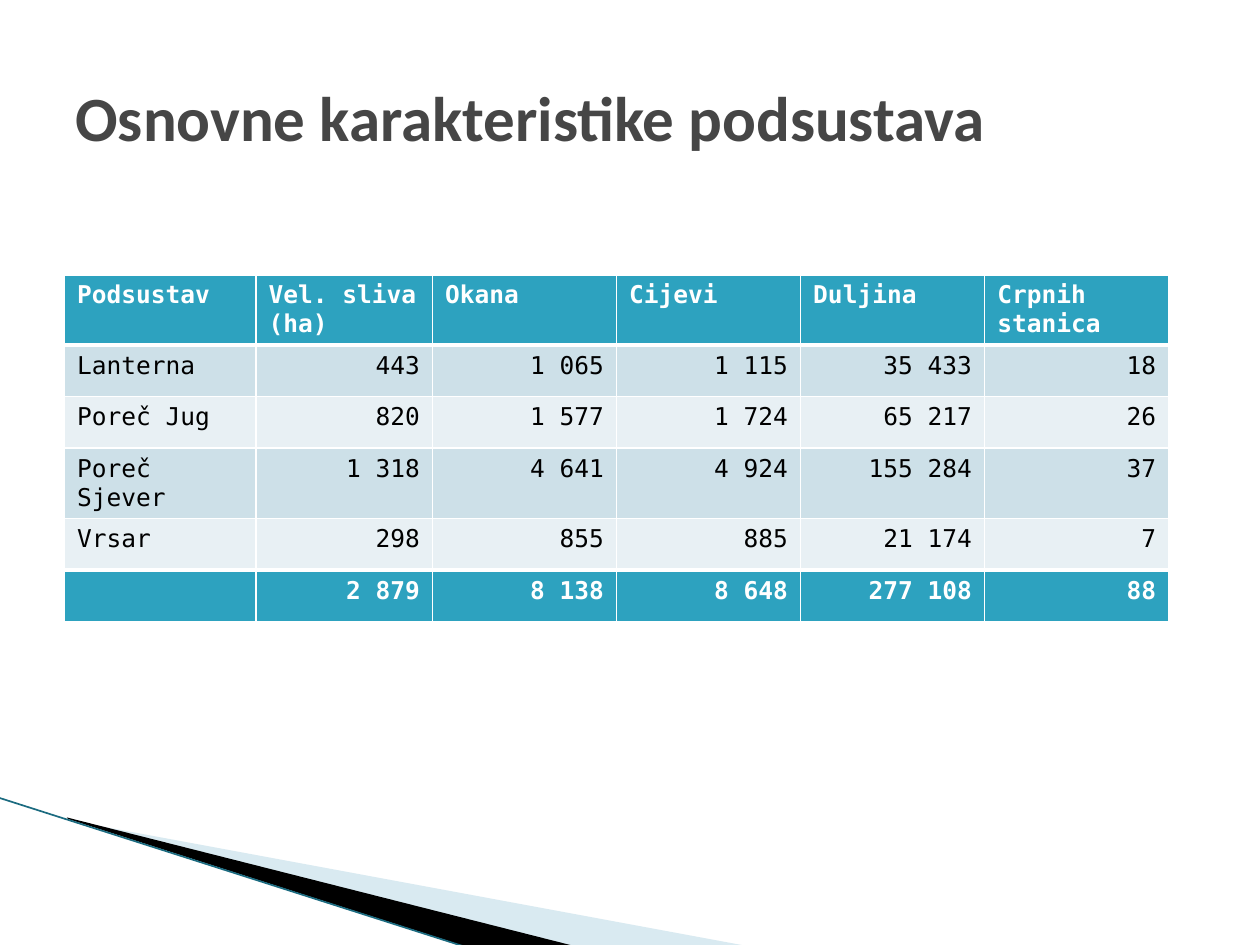
from dataclasses import dataclass
from typing import Any

from lxml.etree import SubElement as Sub
from pptx import Presentation as Deck
from pptx.dml.color import RGBColor as Rgb
from pptx.enum.shapes import MSO_CONNECTOR as Link
from pptx.enum.text import MSO_ANCHOR as Anchor, PP_ALIGN as Align
from pptx.oxml.ns import qn
from pptx.util import Cm, Pt


@dataclass(frozen=True)
class Theme:
    title: str = "464646"
    teal: str = "2DA2BF"
    edge: str = "1B6B80"
    pale: str = "A0CBDC"
    bands: tuple[str, str] = ("CDE0E8", "E8F0F4")
    black: str = "000000"
    white: str = "FFFFFF"
    head: str = "Calibri"
    mono: str = "DejaVu Sans Mono"
    big: int = 36
    small: int = 14
    thin: int = 1
    thick: int = 3


@dataclass(frozen=True)
class Wedge:
    points: tuple[tuple[float, float], ...]
    color: str
    alpha: int = 100


@dataclass(frozen=True)
class Row:
    texts: tuple[str, ...]
    fill: str
    color: str
    bold: bool
    top: int
    base: int


T = Theme()

# Points in centimetres
WEDGES = (
    Wedge(((1.4, 16.54), (15.11, 19.08), (11.58, 19.08), (1.4, 16.51)), T.pale, 40),
    Wedge(((1.35, 16.48), (11.61, 19.08), (9.45, 19.1), (1.37, 16.51)), T.black),
)
HEAD = ("Podsustav", "Vel. sliva (ha)", "Okana", "Cijevi", "Duljina", "Crpnih stanica")
BODY = (
    ("Lanterna", "443", "1 065", "1 115", "35 433", "18"),
    ("Poreč Jug", "820", "1 577", "1 724", "65 217", "26"),
    ("Poreč Sjever", "1 318", "4 641", "4 924", "155 284", "37"),
    ("Vrsar", "298", "855", "885", "21 174", "7"),
)
TOTAL = ("", "2 879", "8 138", "8 648", "277 108", "88")
WIDTHS = (3.86, 3.56) + (3.71,) * 4
HEIGHT = 1.04


def write(para: Any, text: str, color: str, **form: Any) -> None:
    run = para.add_run()
    run.text = text
    for name, value in form.items():
        setattr(run.font, name, value)
    run.font.color.rgb = Rgb.from_string(color)


def draw_wedge(slide: Any, wedge: Wedge) -> None:
    first, *rest = [(Cm(x), Cm(y)) for x, y in wedge.points]
    pen = slide.shapes.build_freeform(*first)
    pen.add_line_segments(rest, close=True)
    shape = pen.convert_to_shape()
    shape.shadow.inherit = False
    shape.line.fill.background()
    shape.fill.solid()
    shape.fill.fore_color.rgb = Rgb.from_string(wedge.color)
    if wedge.alpha < 100:
        tint = shape.fill._xPr.find(".//" + qn("a:srgbClr"))
        Sub(tint, qn("a:alpha"), val=str(wedge.alpha * 1000))


def draw_edge(slide: Any) -> None:
    line = slide.shapes.add_connector(
        Link.STRAIGHT, Cm(-0.03), Cm(16.08), Cm(9.42), Cm(19.1))
    line.line.width = Pt(0.95)
    line.line.color.rgb = Rgb.from_string(T.edge)
    Sub(line._element.spPr, qn("a:effectLst"))


def draw_title(slide: Any, text: str) -> None:
    box = slide.shapes.add_textbox(Cm(1.27), Cm(0.76), Cm(22.86), Cm(3.18))
    frame = box.text_frame
    frame.word_wrap = True
    frame.vertical_anchor = Anchor.MIDDLE
    write(frame.paragraphs[0], text, T.title,
          name=T.head, size=Pt(T.big), bold=True)


def style_cell(cell: Any, row: Row) -> None:
    # Borders come before the fill in the cell properties
    props = cell._tc.get_or_add_tcPr()
    sides = {"lnL": T.thin, "lnR": T.thin, "lnT": row.top, "lnB": row.base}
    for side, width in sides.items():
        line = Sub(props, qn("a:" + side), w=str(Pt(width)))
        Sub(Sub(line, qn("a:solidFill")), qn("a:srgbClr"), val=T.white)
    cell.fill.solid()
    cell.fill.fore_color.rgb = Rgb.from_string(row.fill)


def draw_table(slide: Any, rows: list[Row]) -> None:
    table = slide.shapes.add_table(
        len(rows), len(WIDTHS), Cm(1.3), Cm(5.54),
        Cm(sum(WIDTHS)), Cm(HEIGHT * len(rows))).table
    table.first_row = table.horz_banding = False
    for col, width in zip(table.columns, WIDTHS):
        col.width = Cm(width)
    for i, row in enumerate(rows):
        table.rows[i].height = Cm(HEIGHT)
        for j, text in enumerate(row.texts):
            cell = table.cell(i, j)
            style_cell(cell, row)
            para = cell.text_frame.paragraphs[0]
            if i and j:
                para.alignment = Align.RIGHT
            if text:
                write(para, text, row.color,
                      name=T.mono, size=Pt(T.small), bold=row.bold)


def make_rows() -> list[Row]:
    last = len(BODY) - 1
    body = [
        Row(texts, T.bands[i % 2], T.black, False,
            T.thin if i else T.thick, T.thick if i == last else T.thin)
        for i, texts in enumerate(BODY)
    ]
    head = Row(HEAD, T.teal, T.white, True, T.thin, T.thick)
    total = Row(TOTAL, T.teal, T.white, True, T.thick, T.thin)
    return [head, *body, total]


def main() -> None:
    deck = Deck()
    deck.slide_width, deck.slide_height = Cm(25.4), Cm(19.05)
    slide = deck.slides.add_slide(deck.slide_layouts[6])

    # Corner decoration
    for wedge in WEDGES:
        draw_wedge(slide, wedge)
    draw_edge(slide)

    # Content
    draw_table(slide, make_rows())
    draw_title(slide, "Osnovne karakteristike podsustava")
    deck.save("out.pptx")


if __name__ == "__main__":
    main()
